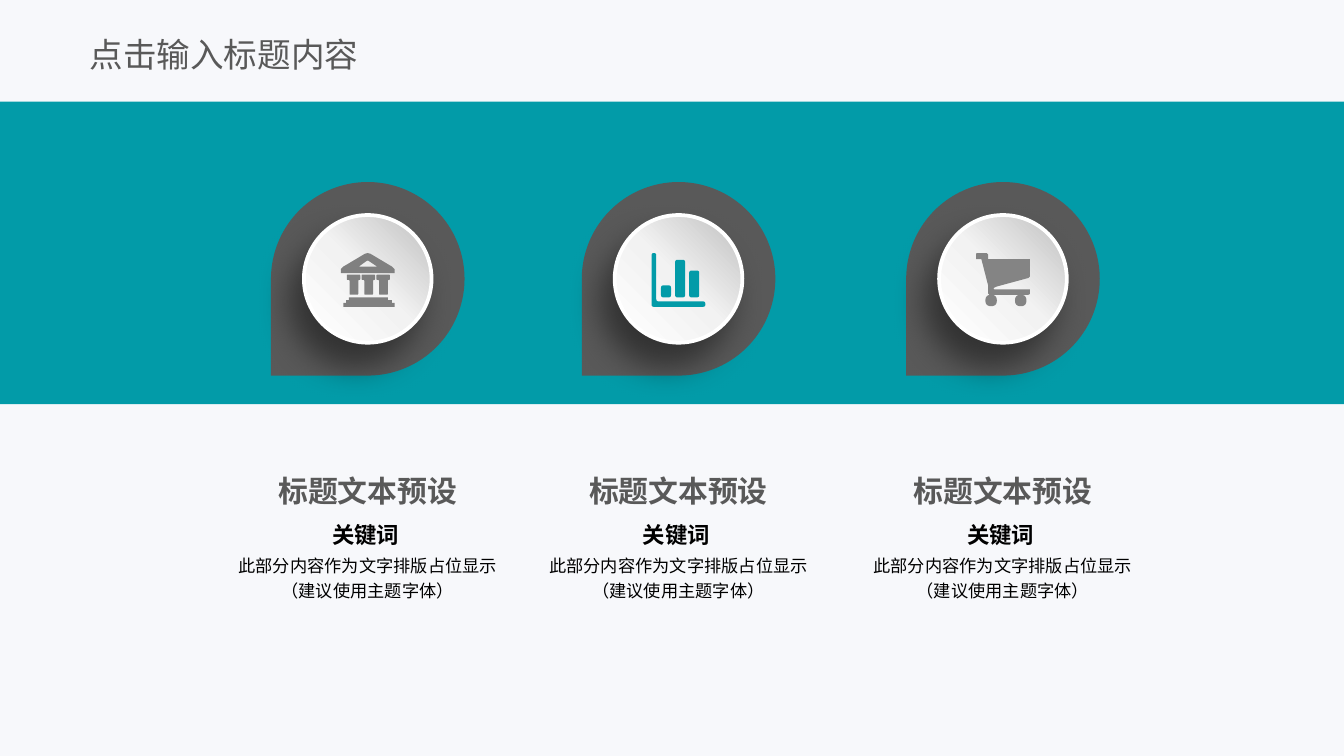
from copy import deepcopy
from dataclasses import dataclass
from math import dist

from lxml import etree
from pptx import Presentation
from pptx.dml.color import RGBColor
from pptx.enum.shapes import MSO_SHAPE
from pptx.enum.text import MSO_ANCHOR, MSO_AUTO_SIZE, PP_ALIGN
from pptx.oxml import parse_xml
from pptx.oxml.ns import nsdecls, qn
from pptx.util import Pt

RECT, DROP, OVAL = MSO_SHAPE.RECTANGLE, MSO_SHAPE.TEAR, MSO_SHAPE.OVAL
LEFT, MID = PP_ALIGN.LEFT, PP_ALIGN.CENTER
TOP, HALF = MSO_ANCHOR.TOP, MSO_ANCHOR.MIDDLE
FIXED = MSO_AUTO_SIZE.NONE


@dataclass(frozen=True)
class Theme:
    face: str = "Noto Sans CJK SC"
    page: str = "F7F8FB"
    teal: str = "029BA8"
    dark: str = "595959"
    gray: str = "808080"
    cart: str = "848484"
    ink: str = "000000"
    white: str = "FFFFFF"
    shade: str = "0D0D0D"
    glow: tuple = ((0, "BFBFBF"), (50, "F2F2F2"), (100, "FFFFFF"))
    title: float = 18
    head: float = 16
    key: float = 12
    note: float = 9.2


def rgb(code):
    return RGBColor.from_string(code)


def box(x, y, w, h):
    return [(x, y), (x + w, y), (x + w, y + h), (x, y + h)]


def soften(points, r, steps=6):
    """Round each corner of a polygon with a short curve."""
    out = []
    for i, p in enumerate(points):
        ends = []
        for q in (points[i - 1], points[(i + 1) % len(points)]):
            t = min(r / dist(p, q), 0.5)
            ends.append([a + (b - a) * t for a, b in zip(p, q)])
        for k in range(steps + 1):
            t = k / steps
            out.append([a * (1 - t) ** 2 + 2 * c * t * (1 - t) + b * t * t
                        for a, c, b in zip(ends[0], p, ends[1])])
    return out


# Icons on a grid of 40 by 40 units
def pillar(x):
    return [(x, 16), (x + 10, 16), (x + 10, 20), (x + 8.5, 20),
            (x + 8.5, 31), (x + 2, 31), (x + 2, 20), (x, 20)]


BANK = [
    [(6, 33), (35, 33), (35, 35), (38, 35), (38, 37), (40, 37),
     (40, 40), (2, 40), (2, 37), (4, 37), (4, 35), (6, 35)],
    *[soften(pillar(x), 0.8) for x in (4.5, 15.5, 26.5)],
    [(0, 15), (0, 12), (2, 10), (18, 0.5), (20, 0), (22, 0.5),
     (38, 10), (40, 12), (40, 15)],
    [(13.5, 10), (19, 6), (20, 5.5), (21, 6), (27, 10)],
]
BARS = [soften([(0, 0), (3.5, 0), (3.5, 36), (40, 36), (40, 40), (0, 40)], 1.8),
        *[soften(box(x, y, 7.5, 33 - y), 2)
          for x, y in ((7, 24), (17.5, 5), (28, 13))]]
CART = [
    [(0, 0.5), (0.5, 0), (8, 0), (9, 1), (9, 4.5), (40, 4.5), (40, 17.5),
     (39, 18.5), (15, 25), (13, 26), (13.5, 27), (40, 27), (40, 30.5),
     (39, 31), (10, 31), (9, 30), (9, 24), (4, 4.5), (0, 4.5)],
    *[soften(box(x, 31, 8.5, 8.5), 4.25) for x in (7, 29)],
]


class Deck:
    def __init__(self, theme):
        self.theme = theme
        self.prs = Presentation()
        self.prs.slide_width, self.prs.slide_height = Pt(720), Pt(405)
        self.slide = self.prs.slides.add_slide(self.prs.slide_layouts[5])
        back = self.slide.background.fill
        back.solid()
        back.fore_color.rgb = rgb(theme.page)
        self.spot = self.slide.shapes

    def group(self):
        self.spot = self.slide.shapes.add_group_shape().shapes

    def paint(self, item, color):
        item.shadow.inherit = False
        item.fill.solid()
        item.fill.fore_color.rgb = rgb(color)
        item.line.fill.background()

    def shape(self, kind, x, y, w, h, color, turn=0):
        item = self.spot.add_shape(kind, Pt(x), Pt(y), Pt(w), Pt(h))
        item.rotation = turn
        self.paint(item, color)
        return item

    def disc(self, x, y, size):
        th = self.theme
        item = self.shape(OVAL, x, y, size, size, th.white)
        item.line.color.rgb = rgb(th.white)
        item.line.width = Pt(2)
        # Gradient and soft shadow
        props = item.element.spPr
        stops = "".join(f'<a:gs pos="{at * 1000}"><a:srgbClr val="{c}"/></a:gs>'
                        for at, c in th.glow)
        grad = parse_xml(f'<a:gradFill {nsdecls("a")}><a:gsLst>{stops}</a:gsLst>'
                         '<a:lin ang="8100000" scaled="0"/></a:gradFill>')
        props.replace(props.find(qn("a:solidFill")), grad)
        shade = etree.SubElement(
            props.find(qn("a:effectLst")), qn("a:outerShdw"), blurRad=str(Pt(17)),
            dist=str(Pt(14)), dir="7200000", algn="ctr", rotWithShape="0")
        tint = etree.SubElement(shade, qn("a:srgbClr"), val=th.shade)
        etree.SubElement(tint, qn("a:alpha"), val="50000")

    def icon(self, x, y, parts, color):
        # One grid unit is 0.72 pt, held as 72 hundredths
        parts = [[(round(a * 72), round(b * 72)) for a, b in p] for p in parts]
        pen = self.spot.build_freeform(*parts[0][0], scale=Pt(0.01))
        for i, part in enumerate(parts):
            if i:
                pen.move_to(*part[0])
            pen.add_line_segments(part[1:], close=True)
        self.paint(pen.convert_to_shape(Pt(x), Pt(y)), color)

    def label(self, item, words, size, color, bold=False, align=MID,
              anchor=TOP, wrap=True, pad=0, gap=1.0):
        frame = item.text_frame
        form = dict(auto_size=FIXED, word_wrap=wrap, vertical_anchor=anchor,
                    margin_left=0, margin_right=0,
                    margin_top=Pt(pad), margin_bottom=Pt(pad))
        for name, value in form.items():
            setattr(frame, name, value)
        para = frame.paragraphs[0]
        para.text = words
        para.alignment, para.line_spacing = align, gap
        look = dict(size=Pt(size), bold=bold, name=self.theme.face)
        for run in para.runs:
            for name, value in look.items():
                setattr(run.font, name, value)
            run.font.color.rgb = rgb(color)
            props = run.font._element
            etree.SubElement(props, qn("a:ea"), typeface=self.theme.face)
        # Line breaks take the style of the text
        for gap_mark in para._p.findall(qn("a:br")):
            gap_mark.append(deepcopy(props))

    def text(self, x, y, w, h, words, size, color, **form):
        item = self.spot.add_textbox(Pt(x), Pt(y), Pt(w), Pt(h))
        self.label(item, words, size, color, **form)

    def title(self, x, y, w, h, words):
        item = self.slide.shapes.title
        place = dict(left=x, top=y, width=w, height=h)
        for name, value in place.items():
            setattr(item, name, Pt(value))
        self.label(item, words, self.theme.title, self.theme.dark,
                   align=LEFT, anchor=HALF, pad=3.6)

    def column(self, mid, parts, color):
        th = self.theme
        self.group()
        # Badge
        self.shape(DROP, mid - 51.85, 97.5, 103.7, 103.7, th.dark, 180)
        self.disc(mid - 34.2, 115.2, 68.4)
        # Texts
        self.text(mid - 72, 295.2, 144, 25.2,
                  "此部分内容作为文字排版占位显示\n（建议使用主题字体）",
                  th.note, th.ink, gap=1.2)
        self.text(mid - 72, 253.4, 144, 19.4, "标题文本预设",
                  th.head, th.dark, bold=True, wrap=False)
        self.text(mid - 19.1, 277.9, 38.2, 17.3, "关键词",
                  th.key, th.ink, bold=True, align=LEFT, anchor=HALF, wrap=False)
        # Icon
        self.icon(mid - 14.4, 135.6, parts, color)


def main():
    theme = Theme()
    deck = Deck(theme)
    # Band and title
    deck.shape(RECT, 0, 54.5, 720, 162, theme.teal)
    deck.title(48, 13.7, 167.8, 30.2, "点击输入标题内容")
    # Three columns
    for mid, parts, color in ((197, BANK, theme.gray), (363.5, BARS, theme.teal),
                              (537.3, CART, theme.cart)):
        deck.column(mid, parts, color)
    deck.prs.save("out.pptx")


if __name__ == "__main__":
    main()
